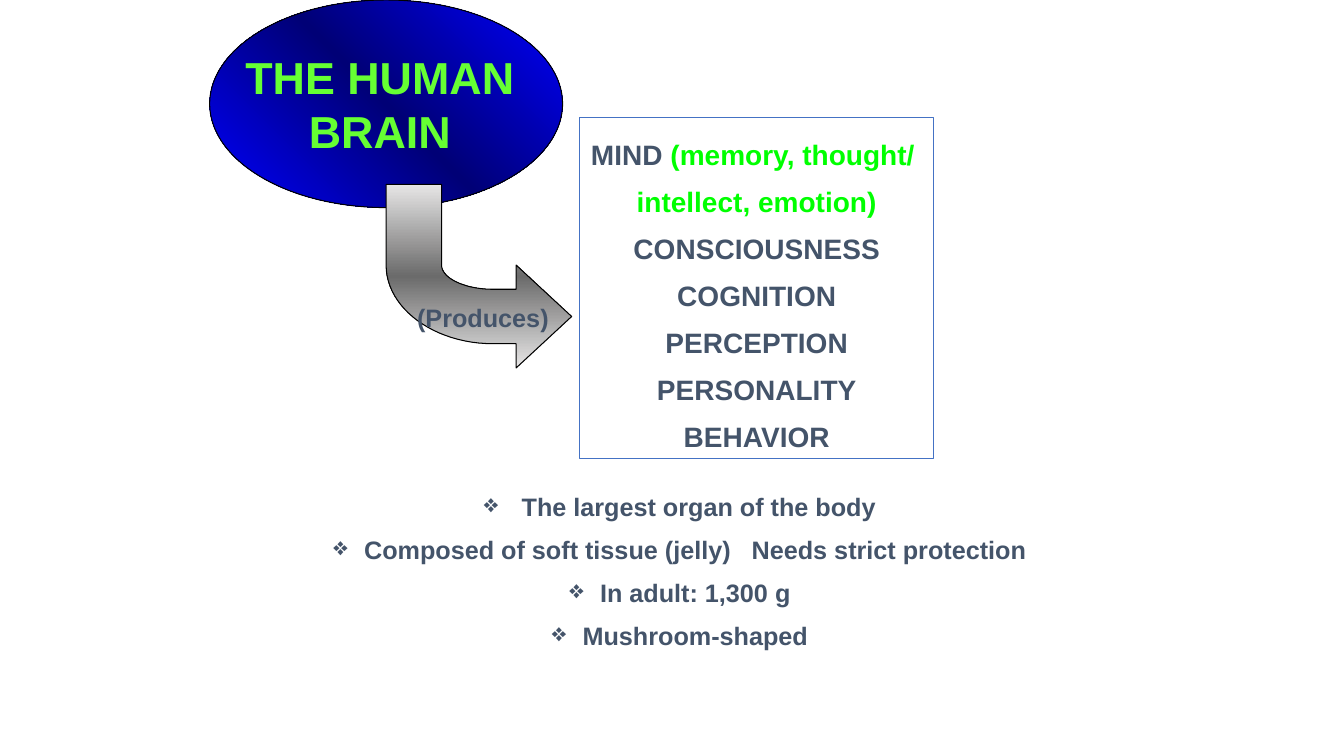
from copy import deepcopy

from lxml import etree
from pptx import Presentation
from pptx.dml.color import RGBColor
from pptx.enum import shapes, text
from pptx.oxml.ns import qn
from pptx.util import Inches, Pt

BLUE = RGBColor(0x00, 0x00, 0xFF)
NAVY = RGBColor(0x00, 0x00, 0x76)
LIME = RGBColor(0x66, 0xFF, 0x33)
GREEN = RGBColor(0x00, 0xFF, 0x00)
SLATE = RGBColor(0x44, 0x54, 0x6A)
SILVER = RGBColor(0xE7, 0xE6, 0xE6)
GREY = RGBColor(0x6B, 0x6B, 0x6B)
BORDER = RGBColor(0x44, 0x72, 0xC4)
BLACK = RGBColor(0x00, 0x00, 0x00)
WHITE = RGBColor(0xFF, 0xFF, 0xFF)


def add_text(p, words, size=18, color=SLATE):
    p.alignment = text.PP_ALIGN.CENTER
    r = p.add_run()
    r.text = words
    r.font.name, r.font.size, r.font.bold = "Arial", Pt(size), True
    r.font.color.rgb = color


def shade(sp, edge, middle, angle):
    """Edge-middle-edge gradient with a thin black outline."""
    sp.shadow.inherit = False
    sp.line.color.rgb = BLACK
    sp.line.width = Pt(0.75)
    sp.fill.gradient()
    sp.fill.gradient_angle = angle
    stops = sp._element.spPr.find(qn("a:gradFill")).find(qn("a:gsLst"))
    stops.append(deepcopy(stops[-1]))
    for stop, place, color in zip(sp.fill.gradient_stops, (0, 0.5, 1), (edge, middle, edge)):
        stop.position = place
        stop.color.rgb = color


prs = Presentation()
prs.slide_width, prs.slide_height = Inches(13.33), Inches(7.5)
s = prs.slides.add_slide(prs.slide_layouts[5])

# Title on a blue ellipse, which goes behind it
place = Inches(2.08), Inches(0), Inches(3.5), Inches(2.06)
brain = s.shapes.add_shape(shapes.MSO_SHAPE.OVAL, *place)
shade(brain, BLUE, NAVY, 45)
s.shapes._spTree.insert(2, brain._element)

title = s.shapes.title
title.left, title.top, title.width, title.height = place
tf = title.text_frame
tf.auto_size = text.MSO_AUTO_SIZE.NONE
tf.word_wrap = False
tf.vertical_anchor = text.MSO_ANCHOR.MIDDLE
add_text(tf.paragraphs[0], "THE HUMAN ", size=32, color=LIME)
add_text(tf.add_paragraph(), "BRAIN ", size=32, color=LIME)

# Bent arrow: each six-number step is a Bezier curve, drawn in short lines
outline = [(5.12, 3.65), (5.12, 3.41), (4.89, 3.41),
           (4.31, 3.41, 3.83, 3.06, 3.83, 2.63),
           (3.83, 1.83), (4.38, 1.83), (4.38, 2.63),
           (4.38, 2.76, 4.61, 2.87, 4.89, 2.87),
           (5.12, 2.87), (5.12, 2.63)]
points = [(5.67, 3.14)]
for step in outline:
    if len(step) == 2:
        points.append(step)
        continue
    start, c1, c2, end = points[-1], step[:2], step[2:4], step[4:]
    for i in range(1, 25):
        t = i / 24
        points.append(tuple((1 - t) ** 3 * a + 3 * t * (1 - t) ** 2 * b
                            + 3 * t * t * (1 - t) * c + t ** 3 * d
                            for a, b, c, d in zip(start, c1, c2, end)))
# The builder keeps whole units only, so points are given in EMU
points = [(Inches(x), Inches(y)) for x, y in points]
builder = s.shapes.build_freeform(*points[0])
builder.add_line_segments(points[1:], close=True)
shade(builder.convert_to_shape(), SILVER, GREY, 90)

# Arrow label
label = s.shapes.add_textbox(Inches(3.89), Inches(2.95), Inches(1.8), Inches(0.4))
label.text_frame.word_wrap = False
label.text_frame.vertical_anchor = text.MSO_ANCHOR.MIDDLE
add_text(label.text_frame.paragraphs[0], "(Produces)")

# Box of what the brain produces
box = s.shapes.add_shape(shapes.MSO_SHAPE.RECTANGLE,
                         Inches(5.75), Inches(1.17), Inches(3.51), Inches(3.38))
box.shadow.inherit = False
box.fill.solid()
box.fill.fore_color.rgb = WHITE
box.line.color.rgb = BORDER
box.line.width = Pt(0.75)
tf = box.text_frame
tf.word_wrap = False
tf.vertical_anchor = text.MSO_ANCHOR.MIDDLE
products = [[("MIND ", SLATE), ("(memory, thought/ ", GREEN)],
            [("intellect, emotion)", GREEN)]]
products += [[(word, SLATE)] for word in
             ("CONSCIOUSNESS", "COGNITION", "PERCEPTION", "PERSONALITY", "BEHAVIOR")]
for i, line in enumerate(products):
    p = tf.add_paragraph() if i else tf.paragraphs[0]
    p.line_spacing = 1.4
    for words, color in line:
        add_text(p, words, size=20, color=color)

# Bulleted facts
facts = s.shapes.add_textbox(Inches(2.83), Inches(4.83), Inches(7.92), Inches(1.76))
facts.fill.solid()
facts.fill.fore_color.rgb = WHITE
tf = facts.text_frame
tf.word_wrap = True
for i, fact in enumerate(("  The largest organ of the body",
                          " Composed of soft tissue (jelly)   Needs strict protection",
                          " In adult: 1,300 g",
                          " Mushroom-shaped")):
    p = tf.add_paragraph() if i else tf.paragraphs[0]
    p.space_before = Pt(9)
    etree.SubElement(p._p.get_or_add_pPr(), qn("a:buChar")).set("char", "❖")
    add_text(p, fact)

prs.save("out.pptx")
